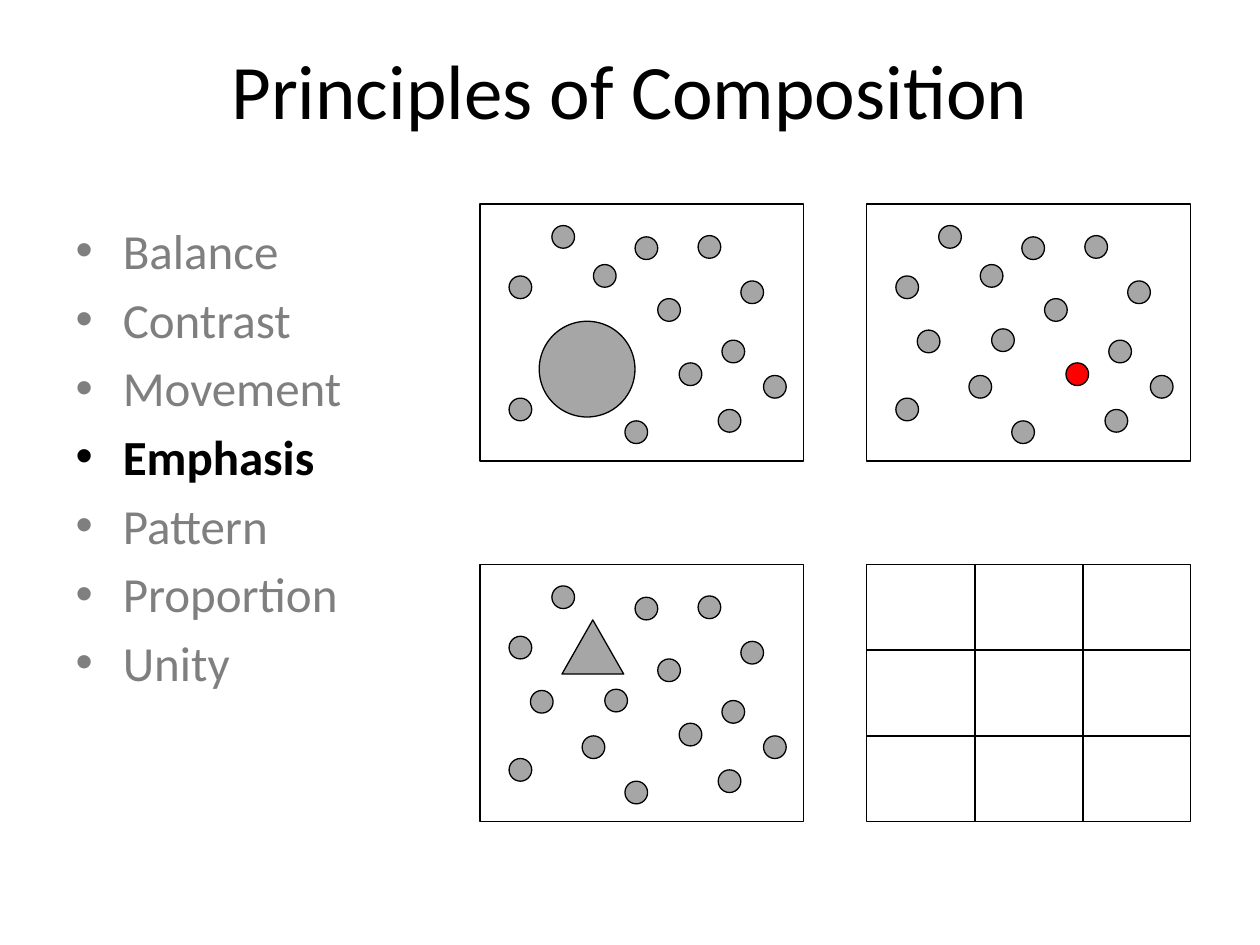
from dataclasses import dataclass

from lxml import etree
from pptx import Presentation
from pptx.dml.color import RGBColor
from pptx.enum.shapes import MSO_CONNECTOR, MSO_SHAPE
from pptx.enum.text import MSO_ANCHOR, PP_ALIGN
from pptx.oxml.ns import qn
from pptx.shapes.autoshape import Shape
from pptx.shapes.group import GroupShape
from pptx.slide import Slide
from pptx.util import Inches, Pt

RECTANGLE = MSO_SHAPE.RECTANGLE
OVAL = MSO_SHAPE.OVAL
TRIANGLE = MSO_SHAPE.ISOSCELES_TRIANGLE
STRAIGHT = MSO_CONNECTOR.STRAIGHT


@dataclass(frozen=True)
class Theme:
    font: str = "Calibri"
    title_size: float = 44
    body_size: float = 28
    outline: float = 0.75
    grid_line: float = 1
    ink: RGBColor = RGBColor(0x00, 0x00, 0x00)
    muted: RGBColor = RGBColor(0x7F, 0x7F, 0x7F)
    dot: RGBColor = RGBColor(0xA6, 0xA6, 0xA6)
    accent: RGBColor = RGBColor(0xFF, 0x00, 0x00)


@dataclass(frozen=True)
class Mark:
    """A filled shape, placed from its panel's top left corner in inches."""
    left: float
    top: float
    width: float = 0.18
    height: float = 0.18
    kind: MSO_SHAPE = OVAL
    fill: RGBColor = Theme.dot


@dataclass(frozen=True)
class Panel:
    column: int
    row: int
    marks: tuple[Mark, ...] = ()
    thirds: bool = False

    @property
    def left(self) -> float:
        return PANEL_LEFT + self.column * COLUMN_STEP

    @property
    def top(self) -> float:
        return PANEL_TOP + self.row * ROW_STEP


THEME = Theme()
PANEL_LEFT, PANEL_TOP = 3.81, 1.62
PANEL_WIDTH, PANEL_HEIGHT = 2.57, 2.04
COLUMN_STEP, ROW_STEP = 3.07, 2.86

PRINCIPLES = ("Balance", "Contrast", "Movement", "Emphasis",
              "Pattern", "Proportion", "Unity")
CURRENT = "Emphasis"

SCATTER = tuple(Mark(left, top) for left, top in (
    (0.23, 0.57), (0.57, 0.17), (1.23, 0.26), (1.41, 0.75),
    (1.73, 0.25), (2.07, 0.61), (0.23, 1.54), (1.15, 1.72),
    (1.89, 1.63), (1.92, 1.08), (2.25, 1.36)))
INNER = (Mark(0.4, 1), Mark(0.81, 1.36), Mark(0.99, 0.99))
UPPER = Mark(0.9, 0.48)
FOCUS = Mark(1.58, 1.26)
RED_FOCUS = Mark(1.58, 1.26, fill=THEME.accent)
BIG_CIRCLE = Mark(0.47, 0.93, 0.76, 0.76)
ODD_TRIANGLE = Mark(0.65, 0.44, 0.49, 0.43, TRIANGLE)

PANELS = (
    Panel(0, 0, (BIG_CIRCLE, *SCATTER, UPPER, FOCUS)),
    Panel(1, 0, (*SCATTER, *INNER, UPPER, RED_FOCUS)),
    Panel(0, 1, (*SCATTER, *INNER, FOCUS, ODD_TRIANGLE)),
    Panel(1, 1, thirds=True),
)


def place(shape: Shape, left: float, top: float, width: float, height: float) -> None:
    shape.left, shape.top = Inches(left), Inches(top)
    shape.width, shape.height = Inches(width), Inches(height)


def add_title(page: Slide) -> None:
    title = page.shapes.title
    place(title, 0.5, 0.08, 9, 1.25)
    title.text_frame.text = "Principles of Composition"
    title.text_frame.vertical_anchor = MSO_ANCHOR.MIDDLE
    para = title.text_frame.paragraphs[0]
    para.alignment = PP_ALIGN.CENTER
    para.font.name = THEME.font
    para.font.size = Pt(THEME.title_size)
    para.font.color.rgb = THEME.ink


def add_principles(page: Slide) -> None:
    body = page.placeholders[1]
    place(body, 0.5, 1.7, 2.92, 4.21)
    body.text_frame.text = "\n".join(PRINCIPLES)
    for para in body.text_frame.paragraphs:
        current = para.text == CURRENT
        para.font.name = THEME.font
        para.font.size = Pt(THEME.body_size)
        para.font.bold = current
        para.font.color.rgb = THEME.ink if current else THEME.muted


def add_outlined(group: GroupShape, kind: MSO_SHAPE, left: float, top: float,
                 width: float, height: float) -> Shape:
    shape = group.shapes.add_shape(
        kind, Inches(left), Inches(top), Inches(width), Inches(height))
    shape.shadow.inherit = False
    shape.line.color.rgb = THEME.ink
    shape.line.width = Pt(THEME.outline)
    return shape


def add_line(group: GroupShape, left: float, top: float,
             right: float, bottom: float) -> None:
    line = group.shapes.add_connector(
        STRAIGHT, Inches(left), Inches(top), Inches(right), Inches(bottom))
    line.line.color.rgb = THEME.ink
    line.line.width = Pt(THEME.grid_line)
    etree.SubElement(line._element.spPr, qn("a:effectLst"))


def add_thirds(group: GroupShape, panel: Panel) -> None:
    right, bottom = panel.left + PANEL_WIDTH, panel.top + PANEL_HEIGHT
    for part in (1 / 3, 2 / 3):
        x = panel.left + PANEL_WIDTH * part
        y = panel.top + PANEL_HEIGHT * part
        add_line(group, x, panel.top, x, bottom)
        add_line(group, panel.left, y, right, y)


def add_panel(page: Slide, panel: Panel) -> None:
    group = page.shapes.add_group_shape()
    frame = add_outlined(group, RECTANGLE, panel.left, panel.top,
                         PANEL_WIDTH, PANEL_HEIGHT)
    frame.fill.background()
    for mark in panel.marks:
        shape = add_outlined(group, mark.kind, panel.left + mark.left,
                             panel.top + mark.top, mark.width, mark.height)
        shape.fill.solid()
        shape.fill.fore_color.rgb = mark.fill
    if panel.thirds:
        add_thirds(group, panel)


def main() -> None:
    deck = Presentation()
    deck.slide_width, deck.slide_height = Inches(10), Inches(7.5)
    page = deck.slides.add_slide(deck.slide_layouts[1])
    add_title(page)
    add_principles(page)
    for panel in PANELS:
        add_panel(page, panel)
    deck.save("out.pptx")


if __name__ == "__main__":
    main()
